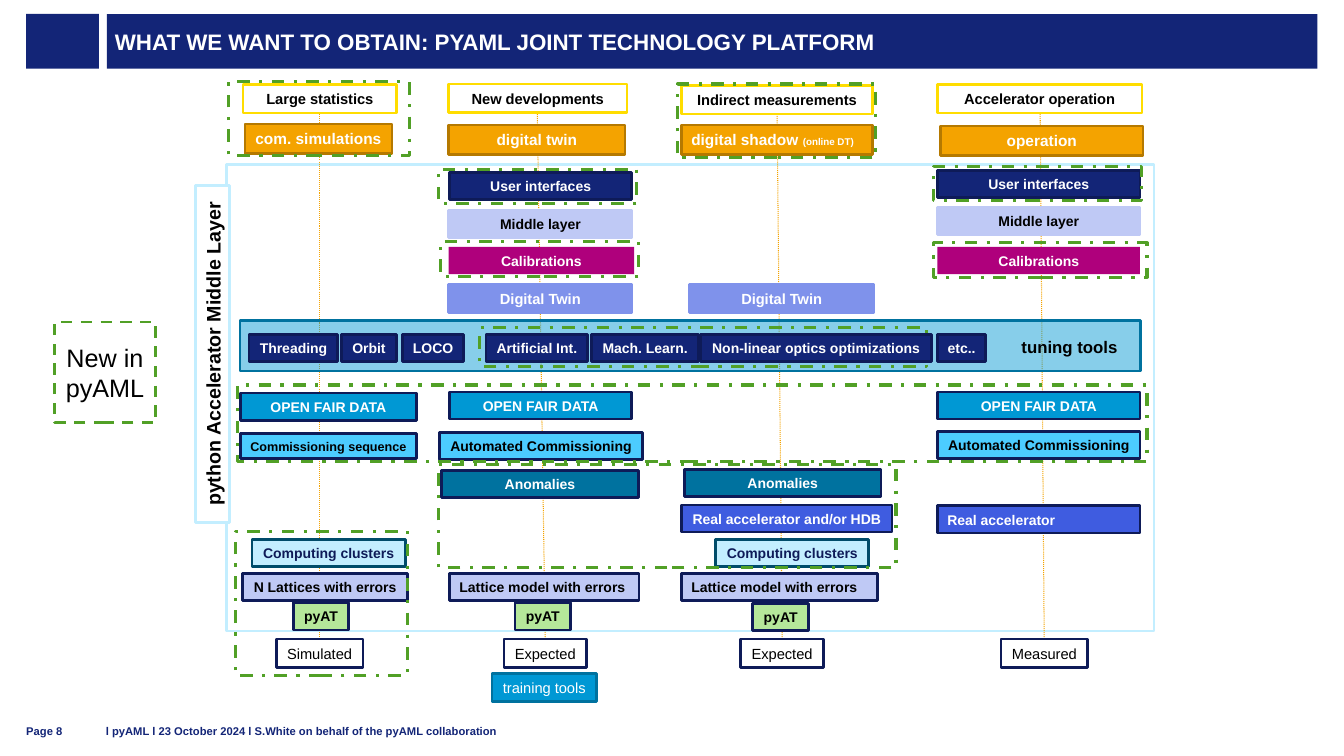
from collections import namedtuple

from lxml import etree
from pptx import Presentation
from pptx import util as u
from pptx.dml.color import RGBColor
from pptx.enum import dml, shapes, text
from pptx.oxml import ns

Box = namedtuple("Box", "left top width height")
Style = namedtuple("Style", "fill line color size bold height", defaults=(10, True, 19.4))

WHITE = RGBColor(0xFF, 0xFF, 0xFF)
BLACK = RGBColor(0, 0, 0)
NAVY = RGBColor(0x13, 0x25, 0x77)
DARK_NAVY = RGBColor(0x0E, 0x1B, 0x58)
ORANGE = RGBColor(0xF4, 0xA3, 0x00)
BROWN = RGBColor(0xB5, 0x79, 0x00)
YELLOW = RGBColor(0xFF, 0xDD, 0x00)
LAVENDER = RGBColor(0xBF, 0xC9, 0xF5)
PERIWINKLE = RGBColor(0x7F, 0x92, 0xEB)
ROYAL = RGBColor(0x3F, 0x5C, 0xE0)
MAGENTA = RGBColor(0xAF, 0x00, 0x7C)
BLUE = RGBColor(0x00, 0x98, 0xD4)
SKY = RGBColor(0x4C, 0xCC, 0xFF)
PALE = RGBColor(0xC3, 0xEE, 0xFF)
TEAL = RGBColor(0x00, 0x72, 0x9F)
DARK_TEAL = RGBColor(0x00, 0x4C, 0x6A)
GREEN = RGBColor(0x51, 0xA0, 0x26)
LIME = RGBColor(0xB5, 0xE7, 0x9A)

CENTER, LEFT = text.PP_ALIGN.CENTER, text.PP_ALIGN.LEFT
MIDDLE, BOTTOM = text.MSO_ANCHOR.MIDDLE, text.MSO_ANCHOR.BOTTOM
DASH = dml.MSO_LINE

STYLES = {
    "goal": Style(WHITE, YELLOW, BLACK, 10.5, True, 20.2),
    "mode": Style(ORANGE, BROWN, WHITE, 11, True, 20.9),
    "tool": Style(NAVY, DARK_NAVY, WHITE),
    "middle": Style(LAVENDER, LAVENDER, BLACK),
    "calibration": Style(MAGENTA, None, WHITE),
    "twin": Style(PERIWINKLE, PERIWINKLE, WHITE, 10.5, True, 20.2),
    "data": Style(BLUE, DARK_NAVY, WHITE),
    "auto": Style(SKY, DARK_NAVY, BLACK),
    "sequence": Style(SKY, DARK_NAVY, BLACK, 9, True, 18),
    "anomaly": Style(TEAL, DARK_NAVY, WHITE),
    "real": Style(ROYAL, DARK_NAVY, WHITE),
    "cluster": Style(PALE, DARK_TEAL, DARK_NAVY),
    "lattice": Style(LAVENDER, DARK_NAVY, BLACK),
    "engine": Style(LIME, DARK_NAVY, BLACK),
    "result": Style(None, DARK_NAVY, BLACK, 10.5, False, 20.2),
    "training": Style(BLUE, TEAL, WHITE, 10.5, False, 20.2),
}

COLUMNS = [
    (11.5, 54.7, 54.7, [
        ("goal", "Large statistics", 0, 0.5, 110),
        ("mode", "com. simulations", 1.5, 28.6, 105),
        ("data", "OPEN FAIR DATA", -2, 220.8, 126),
        ("sequence", "Commissioning sequence", -2, 249.6, 126),
        ("cluster", "Computing clusters", 6.5, 325.2, 109.4),
        ("lattice", "N Lattices with errors", 0, 349.7, 117.4),
        ("engine", "pyAT", 36, 370.6, 39.6),
        ("result", "Simulated", 23.8, 396.5, 62)]),
    (158.5, 63.3, 69, [
        ("goal", "New developments", 0, 0, 127.4),
        ("mode", "digital twin", 0, 29.3, 126),
        ("tool", "User interfaces", 0.5, 63.1, 130.3),
        ("middle", "Middle layer", 0, 90.5, 131),
        ("calibration", "Calibrations", 0, 116.4, 132.5),
        ("twin", "Digital Twin", 0, 143, 131),
        ("data", "OPEN FAIR DATA", 0.5, 220, 130.3),
        ("auto", "Automated Commissioning", -6.5, 248.9, 144.7),
        ("anomaly", "Anomalies", -5, 276.2, 140.4),
        ("lattice", "Lattice model with errors", 0.5, 349.7, 135.4, LEFT),
        ("engine", "pyAT", 47.4, 370.6, 39.6),
        ("result", "Expected", 39.5, 396.5, 59),
        ("training", "training tools", 30.9, 421, 74.9)]),
    (324.7, 68.4, 72, [
        ("goal", "Indirect measurements", 0, 1.2, 136.8),
        ("mode", "digital shadow ", 0, 29.3, 136.8, LEFT, "(online DT)"),
        ("twin", "Digital Twin", 5.8, 143, 131.8),
        ("anomaly", "Anomalies", 2.2, 275.5, 140.4),
        ("real", "Real accelerator and/or HDB", 0, 300.7, 150.5),
        ("cluster", "Computing clusters", 24.5, 325.2, 109.4),
        ("lattice", "Lattice model with errors", 0, 349.7, 140.4, LEFT),
        ("engine", "pyAT", 51.1, 371.3, 39.6),
        ("result", "Expected", 42.5, 396.5, 59)]),
    (507.6, 73.4, 76.3, [
        ("goal", "Accelerator operation", 0, 0.5, 146.2),
        ("mode", "operation", 2.2, 30, 144.7),
        ("tool", "User interfaces", 0, 61.7, 144.7),
        ("middle", "Middle layer", 0, 88.3, 144.7),
        ("calibration", "Calibrations", 0, 116.4, 144.7),
        ("data", "OPEN FAIR DATA", 0, 220, 144.7),
        ("auto", "Automated Commissioning", 0, 248.2, 144.7),
        ("real", "Real accelerator", 0, 301.4, 144.7, LEFT),
        ("result", "Measured", 45.4, 396.5, 62)]),
]

TUNING_TOOLS = [("Threading", 6.5, 63.4), ("Orbit", 72.7, 38.9), ("LOCO", 116, 43.9),
                ("Artificial Int.", 175.7, 72.7), ("Mach. Learn.", 251.3, 76.3),
                ("Non-linear optics optimizations", 329, 164.9), ("etc..", 498.2, 34.6)]

NOVELTIES = [Box(151.2, 61, 141.8, 24.5), Box(152.6, 112.8, 141.8, 24.5),
             Box(321.8, 0, 141.8, 52.6), Box(504.7, 58.8, 149, 24.5),
             Box(504.7, 113.5, 152.6, 24.5), Box(7.9, 215, 649.4, 54.7),
             Box(6.5, 319.4, 122.4, 103), Box(151.2, 271.9, 326.9, 73.4),
             Box(1.4, -1.7, 128.9, 52.6)]


def inside(box, left, top, width, height):
    return Box(box.left + left, box.top + top, width, height)


def write(shape, words, color, size, bold=True, align=CENTER, anchor=MIDDLE,
          wrap=False, margins=None, note=""):
    frame = shape.text_frame
    settings = {"word_wrap": wrap, "vertical_anchor": anchor, "auto_size": text.MSO_AUTO_SIZE.NONE}
    if margins is not None:
        side = u.Pt(margins)
        settings |= {"margin_left": side, "margin_right": side, "margin_top": 0, "margin_bottom": 0}
    for name, value in settings.items():
        setattr(frame, name, value)
    para = frame.paragraphs[0]
    para.alignment = align
    for part, points in ((words, size), (note, 7)):
        if part:
            span = para.add_run()
            span.text = part
            for name, value in {"name": "Arial", "size": u.Pt(points), "bold": bold}.items():
                setattr(span.font, name, value)
            span.font.color.rgb = color


def rectangle(page, box, fill=None, line=None, weight=2, dash=None):
    shape = page.shapes.add_shape(shapes.MSO_SHAPE.RECTANGLE, *map(u.Pt, box))
    shape.shadow.inherit = False
    if fill is None:
        shape.fill.background()
    else:
        shape.fill.solid()
        shape.fill.fore_color.rgb = fill
    if line is None:
        shape.line.fill.background()
    else:
        shape.line.color.rgb = line
        shape.line.width = u.Pt(weight)
        shape.line.dash_style = dash
    return shape


def novelty(page, box):
    rectangle(page, box, line=GREEN, weight=2.25, dash=DASH.DASH_DOT)


def label(page, box, kind, words, left, top, width, align=CENTER, note=""):
    style = STYLES[kind]
    shape = rectangle(page, inside(box, left, top, width, style.height), style.fill, style.line)
    write(shape, words, style.color, style.size, style.bold, align, wrap=align == LEFT, note=note)


def header(page, box):
    rectangle(page, box._replace(width=52), NAVY)
    title = page.shapes.title
    place = inside(box, 57.6, 0, box.width - 57.6, box.height)
    for name, value in place._asdict().items():
        setattr(title, name, u.Pt(value))
    title.fill.solid()
    title.fill.fore_color.rgb = NAVY
    write(title, "WHAT WE WANT TO OBTAIN: PYAML JOINT TECHNOLOGY PLATFORM",
          WHITE, 16, align=LEFT, wrap=True, margins=5.76)


def column(page, box, thread_start, thread_end, items):
    thread = page.shapes.add_connector(
        shapes.MSO_CONNECTOR.STRAIGHT,
        *map(u.Pt, (box.left + thread_start, box.top + 20, box.left + thread_end, box.top + 396.5)))
    thread.line.color.rgb = ORANGE
    thread.line.width = u.Pt(0.75)
    thread.line.dash_style = DASH.ROUND_DOT
    etree.SubElement(thread.element.spPr, ns.qn("a:effectLst"))
    for item in items:
        label(page, box, *item)


def tuning_band(page, box):
    band = rectangle(page, box, BLUE, TEAL)
    tint = band.element.spPr.find(ns.qn("a:solidFill"))[0]
    etree.SubElement(tint, ns.qn("a:alpha"), val="47000")
    novelty(page, inside(box, 171.4, 5, 319, 28))
    for words, left, width in TUNING_TOOLS:
        label(page, box, "tool", words, left, 10, width)
    caption = page.shapes.add_textbox(*map(u.Pt, inside(box, 549.4, 7.2, 86.4, 22.3)))
    write(caption, "tuning tools", BLACK, 12)


def diagram(page, box):
    rectangle(page, inside(box, 0, 57.4, box.width, 333.4), line=PALE)
    side = rectangle(page, inside(box, -130.3, 180.5, 240.5, 24.5), WHITE, PALE)
    side.rotation = 270
    write(side, "python Accelerator Middle Layer", BLACK, 14)
    for left, thread_start, thread_end, items in COLUMNS:
        column(page, inside(box, left, 0, 150, box.height), thread_start, thread_end, items)
    tuning_band(page, inside(box, 9.4, 169, 643, 36))
    for mark in NOVELTIES:
        novelty(page, inside(box, *mark))


def legend(page, box):
    shape = rectangle(page, box, WHITE, GREEN, dash=DASH.DASH)
    write(shape, "New in pyAML", BLACK, 18, bold=False, wrap=True)


def footer(page, box):
    credit = "l pyAML l 23 October 2024 l S.White on behalf of the pyAML collaboration"
    for words, left, width in (("Page 8", 0, 43.2), (credit, 56.9, 642)):
        area = page.shapes.add_textbox(*map(u.Pt, inside(box, left, 0, width, box.height)))
        write(area, words, NAVY, 8, align=LEFT, anchor=BOTTOM, wrap=True, margins=0)


def main():
    deck = Presentation()
    deck.slide_width, deck.slide_height = u.Pt(960), u.Pt(540)
    page = deck.slides.add_slide(deck.slide_layouts[5])
    header(page, Box(18.7, 10, 922.3, 39))
    diagram(page, Box(162, 60, 662.4, 441))
    legend(page, Box(39, 230, 72, 72))
    footer(page, Box(18.7, 510.5, 700, 16.5))
    deck.save("out.pptx")


if __name__ == "__main__":
    main()
